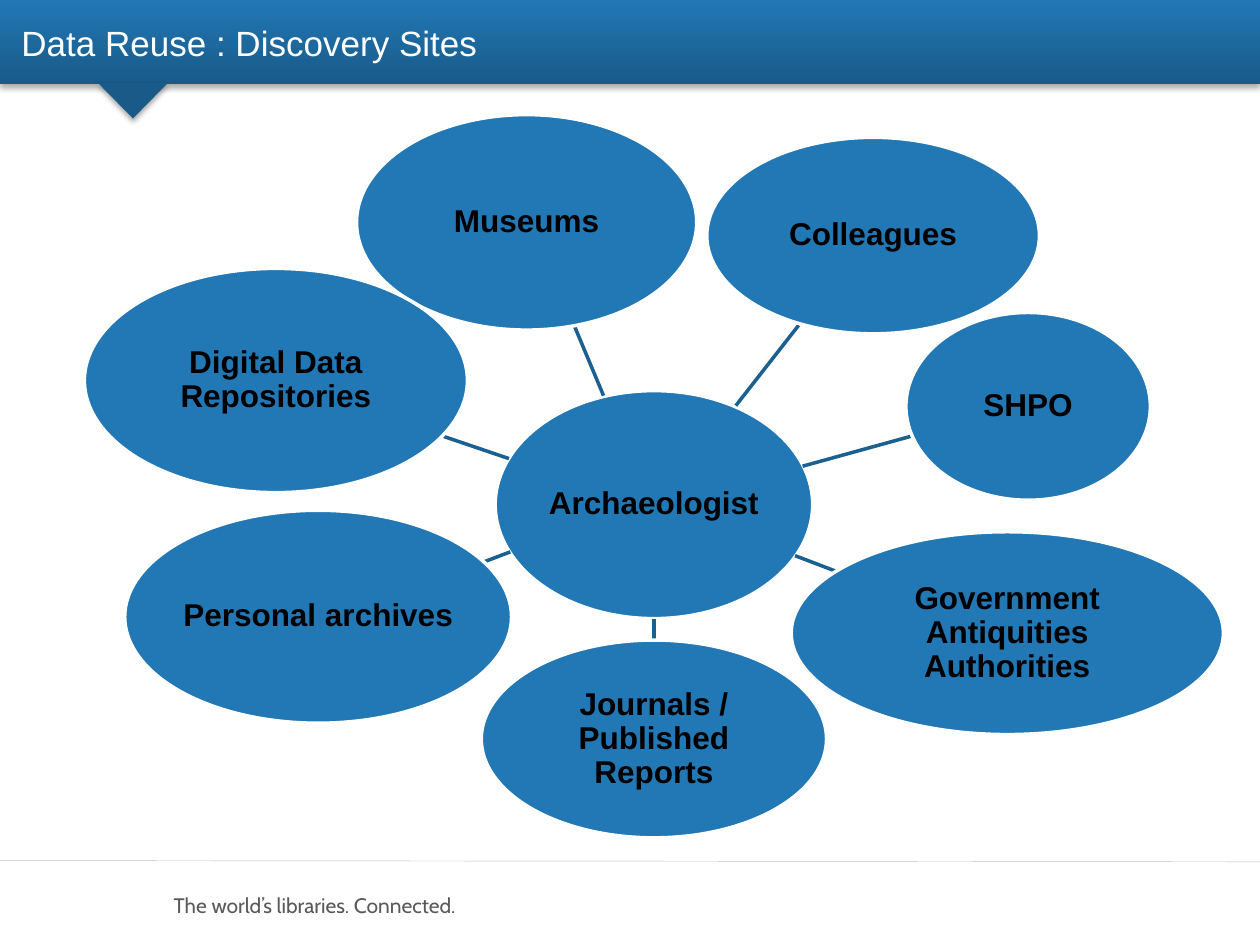
"""Build a slide showing the discovery sites around an archaeologist."""
import pptx
import pptx.dml.color
import pptx.enum.dml
import pptx.enum.shapes
import pptx.enum.text
import pptx.util
from lxml import etree
from pptx.util import Inches

SHAPE = pptx.enum.shapes.MSO_SHAPE
STRAIGHT = pptx.enum.shapes.MSO_CONNECTOR.STRAIGHT
MIDDLE = pptx.enum.text.MSO_ANCHOR.MIDDLE
CENTER = pptx.enum.text.PP_ALIGN.CENTER
DRAWING = "http://schemas.openxmlformats.org/drawingml/2006/main"
SHADOW = (
    f'<a:effectLst xmlns:a="{DRAWING}">'
    '<a:outerShdw blurRad="40000" dist="23000" dir="5400000" rotWithShape="0">'
    '<a:srgbClr val="000000"><a:alpha val="35000"/></a:srgbClr>'
    "</a:outerShdw></a:effectLst>"
)


def rgb(value):
    return pptx.dml.color.RGBColor.from_string(value)


def write(frame, text, font_name, size, color):
    frame.text = text
    frame.vertical_anchor = MIDDLE
    font = frame.paragraphs[0].runs[0].font
    font.name = font_name
    font.size = pptx.util.Pt(size)
    font.color.rgb = rgb(color)
    return font


deck = pptx.Presentation()
deck.slide_width, deck.slide_height = Inches(10), Inches(7.5)
slide = deck.slides.add_slide(deck.slide_layouts[6])
shapes = slide.shapes

tagline = shapes.add_textbox(Inches(1.28), Inches(7.03), Inches(2.81), Inches(0.3))
tagline.text_frame.word_wrap = True
write(tagline.text_frame, "The world’s libraries. Connected.", "Cabin", 12, "595959")

footer_rule = shapes.add_connector(
    STRAIGHT, Inches(0), Inches(6.83), Inches(10), Inches(6.84)
)
footer_rule.line.color.rgb = rgb("BFBFBF")
footer_rule.line.width = pptx.util.Pt(0.25)
etree.SubElement(footer_rule._element.spPr, f"{{{DRAWING}}}effectLst")

banner = shapes.add_shape(SHAPE.RECTANGLE, Inches(0), Inches(0), Inches(10), Inches(0.67))
banner.fill.gradient()
banner.fill.gradient_angle = 90
for stop, position, color in zip(banner.fill.gradient_stops, (0, 1), ("195A88", "2178B5")):
    stop.position = position
    stop.color.rgb = rgb(color)

pointer = shapes.add_shape(
    SHAPE.ISOSCELES_TRIANGLE, Inches(0.78), Inches(0.66), Inches(0.55), Inches(0.28)
)
pointer.rotation = 180
pointer.fill.solid()
pointer.fill.fore_color.rgb = rgb("195A88")

for header_part in (banner, pointer):
    header_part.line.fill.background()
    header_part._element.spPr.append(etree.fromstring(SHADOW))

title = shapes.add_textbox(Inches(0.17), Inches(0), Inches(9.33), Inches(0.67))
title.text_frame.margin_left = title.text_frame.margin_right = 0
write(title.text_frame, "Data Reuse : Discovery Sites", "Arial", 20, "FFFFFF")

sites = [
    ("Archaeologist", (3.93, 3.1, 2.52, 1.81), None),
    ("Museums", (2.83, 0.91, 2.7, 1.71), (4.79, 3.14, 4.56, 2.59)),
    ("Colleagues", (5.61, 1.09, 2.64, 1.56), (5.84, 3.22, 6.34, 2.58)),
    ("SHPO", (7.19, 2.48, 1.94, 1.49), (6.37, 3.7, 7.24, 3.46)),
    ("Government Antiquities Authorities", (6.28, 4.22, 3.43, 1.61), (6.31, 4.41, 6.65, 4.54)),
    ("Journals / Published Reports", (3.82, 5.08, 2.74, 1.57), (5.19, 4.91, 5.19, 5.08)),
    ("Personal archives", (0.99, 4.05, 3.07, 1.69), (4.05, 4.38, 3.84, 4.46)),
    ("Digital Data Repositories", (0.67, 2.13, 3.04, 1.78), (4.04, 3.64, 3.51, 3.46)),
]
for label, box, ends in sites:
    if ends:
        spoke = shapes.add_connector(STRAIGHT, *map(Inches, ends))
        spoke.line.color.rgb = rgb("1A6091")
        spoke.line.width = pptx.util.Pt(2)
        etree.SubElement(spoke._element.spPr, f"{{{DRAWING}}}effectLst")
    site = shapes.add_shape(SHAPE.OVAL, *map(Inches, box))
    site.shadow.inherit = False
    site.fill.solid()
    site.fill.fore_color.rgb = rgb("2178B5")
    site.line.color.rgb = rgb("FFFFFF")
    site.line.width = pptx.util.Pt(2)
    frame = site.text_frame
    frame.word_wrap = True
    frame.margin_left = frame.margin_right = Inches(0.01)
    frame.margin_top = frame.margin_bottom = Inches(0.02)
    write(frame, label, "Arial", 18, "000000").bold = True
    frame.paragraphs[0].alignment = CENTER
    frame.paragraphs[0].line_spacing = 0.9

deck.save("out.pptx")
